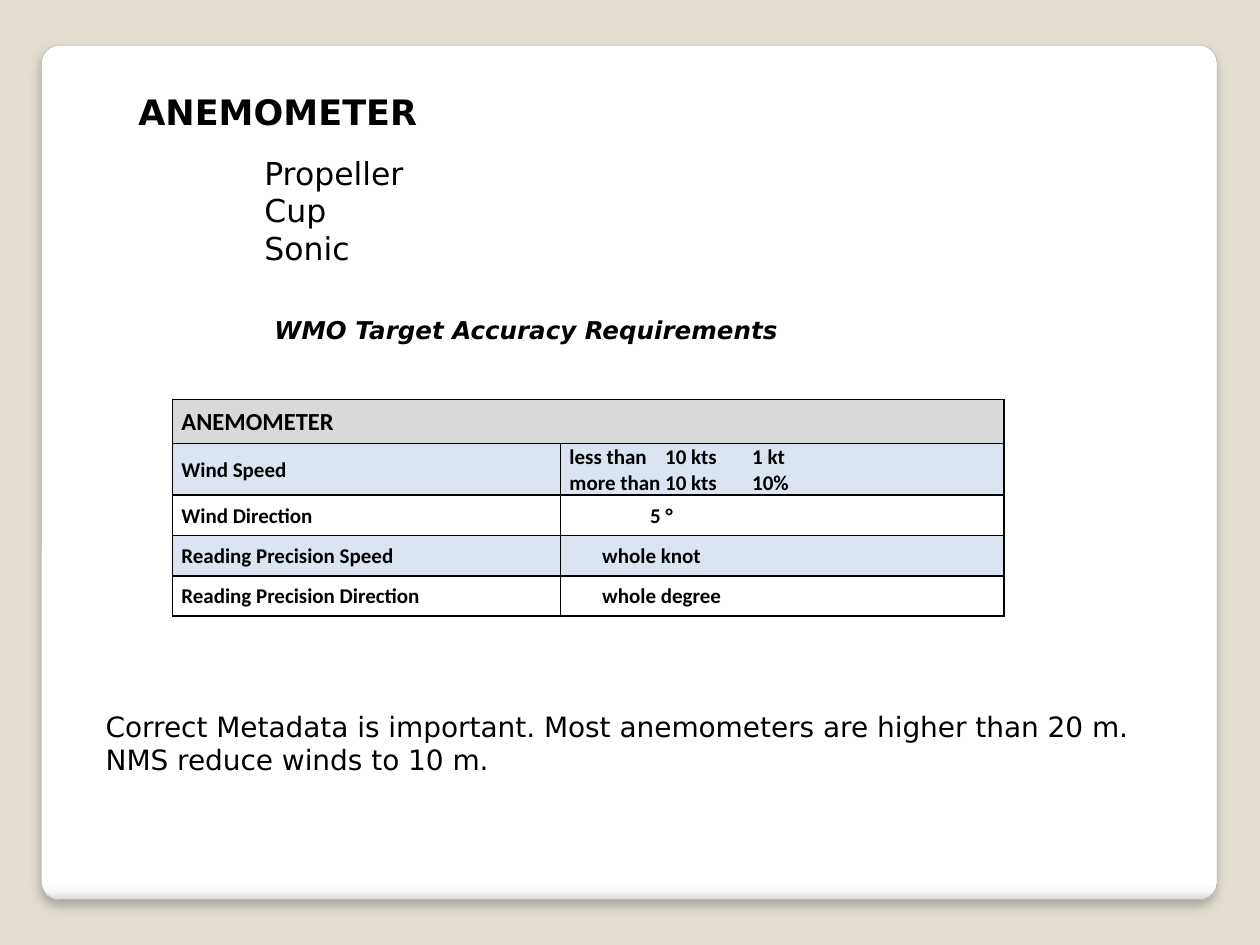
"""Build the anemometer accuracy slide."""
import pptx
import pptx.dml.color
import pptx.enum.shapes
import pptx.enum.text
import pptx.oxml
import pptx.oxml.ns
import pptx.util

Inches, Pt = pptx.util.Inches, pptx.util.Pt
RGB = pptx.dml.color.RGBColor.from_string
NS = pptx.oxml.ns.nsdecls("a")

THEME = {
    "bg": "E3DED1", "text": "000000", "edge": "A4A4A4", "head": "D9D9D9", "band": "DBE5F1",
    "panel": [(0, "FFFFFF"), (98, "FFFFFF"), (99, "F7F7F7"), (100, "DADADA")],
    "body_font": "DejaVu Sans", "table_font": "Calibri",
    "title": 20, "list": 18, "caption": 14, "note": 16, "table_head": 14, "cell": 12,
}

TITLE = "ANEMOMETER"
TYPES = ["Propeller", "Cup", "Sonic"]
CAPTION = "WMO Target Accuracy Requirements"
NOTE = ("Correct Metadata is important. Most anemometers are higher than 20 m. "
        "NMS reduce winds to 10 m.")
TABLE_HEAD = "ANEMOMETER"
ROWS = [
    ("Wind Speed", ["less than\t10 kts\t1 kt", "more than\t10 kts\t10%"], 0),
    ("Wind Direction", ["5 °"], 0.64),
    ("Reading Precision Speed", ["whole knot"], 0.26),
    ("Reading Precision Direction", ["whole degree"], 0.26),
]
TABS = [0.76, 1.45]
COL_WIDTHS = [3.08, 3.52]
ROW_HEIGHTS = [0.35, 0.41, 0.32, 0.32, 0.32]


def style(p, size, font="body_font", bold=False, italic=False):
    f = p.font
    f.name, f.size, f.bold, f.italic = THEME[font], Pt(THEME[size]), bold, italic
    f.color.rgb = RGB(THEME["text"])


def add_text(slide, box, paragraphs):
    tf = slide.shapes.add_textbox(*map(Inches, box)).text_frame
    tf.word_wrap = True
    for i, (text, fmt) in enumerate(paragraphs):
        p = tf.add_paragraph() if i else tf.paragraphs[0]
        p.text = text
        style(p, **fmt)
    return tf


def add_panel(slide):
    sp = slide.shapes.add_shape(pptx.enum.shapes.MSO_SHAPE.ROUNDED_RECTANGLE,
                                *map(Inches, (0.33, 0.36, 9.33, 6.78)))
    sp.adjustments[0] = 0.021
    sp.fill.background()
    sp.line.color.rgb = RGB(THEME["edge"])
    sp.line.width = Pt(0.16)
    sp.shadow.inherit = False
    stops = "".join(f'<a:gs pos="{pos * 1000}"><a:srgbClr val="{color}"/></a:gs>'
                    for pos, color in THEME["panel"])
    spPr = sp.element.spPr
    no_fill = spPr.find(pptx.oxml.ns.qn("a:noFill"))
    spPr.replace(no_fill, pptx.oxml.parse_xml(
        f'<a:gradFill {NS}><a:gsLst>{stops}</a:gsLst><a:lin ang="5400000" scaled="0"/></a:gradFill>'))
    effects = spPr.find(pptx.oxml.ns.qn("a:effectLst"))
    effects.append(pptx.oxml.parse_xml(
        f'<a:outerShdw {NS} blurRad="{Pt(6)}" dist="{Pt(4)}" dir="5400000" rotWithShape="0">'
        f'<a:srgbClr val="{THEME["text"]}"><a:alpha val="25000"/></a:srgbClr></a:outerShdw>'))


def fill_cell(cell, lines, size, fill=None, indent=0):
    cell.vertical_anchor = pptx.enum.text.MSO_ANCHOR.MIDDLE
    cell.margin_left = cell.margin_right = Inches(0.07)
    cell.margin_top, cell.margin_bottom = Inches(0.01), 0
    if fill:
        cell.fill.solid()
        cell.fill.fore_color.rgb = RGB(THEME[fill])
    else:
        cell.fill.background()
    tcPr = cell._tc.get_or_add_tcPr()
    for i, side in enumerate(("lnL", "lnR", "lnT", "lnB")):
        tcPr.insert(i, pptx.oxml.parse_xml(
            f'<a:{side} {NS} w="{Pt(1)}"><a:solidFill><a:srgbClr val="{THEME["text"]}"/>'
            f'</a:solidFill></a:{side}>'))
    cell.text = "\n".join(lines)
    for p in cell.text_frame.paragraphs:
        style(p, size, "table_font", bold=True)
        pPr = p._p.get_or_add_pPr()
        if indent:
            pPr.set("marL", str(Inches(indent)))
        if "\t" in p.text:
            tabs = "".join(f'<a:tab pos="{Inches(t)}" algn="l"/>' for t in TABS)
            pPr.insert(0, pptx.oxml.parse_xml(f"<a:tabLst {NS}>{tabs}</a:tabLst>"))


def add_accuracy_table(slide):
    table = slide.shapes.add_table(
        len(ROW_HEIGHTS), len(COL_WIDTHS), Inches(1.37), Inches(3.17),
        Inches(sum(COL_WIDTHS)), Inches(sum(ROW_HEIGHTS))).table
    table.first_row = table.horz_banding = False
    for col, width in zip(table.columns, COL_WIDTHS):
        col.width = Inches(width)
    for row, height in zip(table.rows, ROW_HEIGHTS):
        row.height = Inches(height)
    table.cell(0, 0).merge(table.cell(0, 1))
    fill_cell(table.cell(0, 0), [TABLE_HEAD], "table_head", "head")
    fill_cell(table.cell(0, 1), [], "table_head", "head")
    for i, (label, values, indent) in enumerate(ROWS, 1):
        fill = "band" if i % 2 else None
        fill_cell(table.cell(i, 0), [label], "cell", fill)
        fill_cell(table.cell(i, 1), values, "cell", fill, indent)


prs = pptx.Presentation()
prs.slide_width, prs.slide_height = Inches(10), Inches(7.5)
slide = prs.slides.add_slide(prs.slide_layouts[6])
slide.background.fill.solid()
slide.background.fill.fore_color.rgb = RGB(THEME["bg"])

add_panel(slide)
tf = add_text(slide, (1, 0.67, 7.17, 1.58),
              [(TITLE, {"size": "title", "bold": True})] + [(t, {"size": "list"}) for t in TYPES])
tf.paragraphs[0].space_after = Pt(12)
for p in tf.paragraphs[1:]:
    p._p.get_or_add_pPr().set("marL", str(Inches(1)))
add_text(slide, (2.08, 2.45, 4.37, 0.34),
         [(CAPTION, {"size": "caption", "bold": True, "italic": True})])
add_text(slide, (0.74, 5.58, 8.42, 0.64), [(NOTE, {"size": "note"})])
add_accuracy_table(slide)

prs.save("out.pptx")
